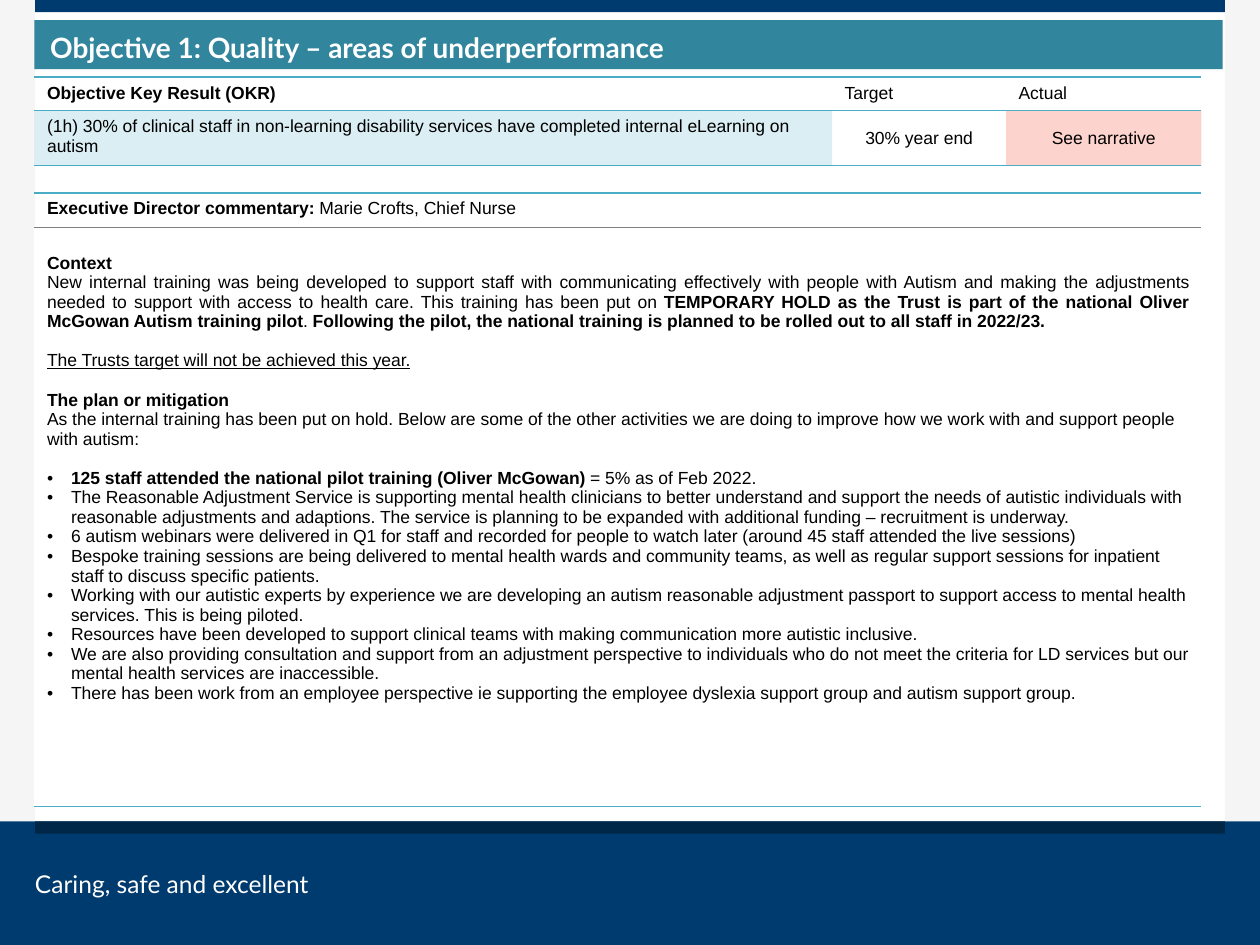
from lxml.etree import SubElement
from pptx import Presentation
from pptx.dml.color import RGBColor
from pptx.enum.shapes import MSO_SHAPE as Shape
from pptx.enum.text import MSO_ANCHOR as Anchor, PP_ALIGN as Align
from pptx.oxml.ns import qn
from pptx.util import Pt

COLORS = {
    "navy": "003B6F", "dark_navy": "002648", "pale_grey": "F5F5F5",
    "teal": "31859C", "aqua": "4BACC6", "red": "F82A08",
    "rule_grey": "7F7F7F", "white": "FFFFFF", "black": "000000",
}
PLAIN_TABLE = "{2D5ABB26-0587-4C30-8999-92F81FD0307C}"
BODY_SIZE = 10
LINE_GAP = 11.2
BULLET_INDENT = 13.68

CONTEXT = [
    ("New internal training was being developed to support staff with communicating effectively "
     "with people with Autism and making the adjustments needed to support with access to health "
     "care. This training has been put on ", ""),
    ("TEMPORARY HOLD as the Trust is part of the national Oliver McGowan Autism training pilot", "b"),
    (". ", ""),
    ("Following the pilot, the national training is planned to be rolled out to all staff in 2022/23.", "b"),
]
PLAN = ("As the internal training has been put on hold. Below are some of the other activities we are "
        "doing to improve how we work with and support people with autism:")
ACTIVITIES = [
    [("125 staff attended the national pilot training (Oliver McGowan) ", "b"),
     ("= 5% as of Feb 2022.", "")],
    [("The Reasonable Adjustment Service is supporting mental health clinicians to better understand "
      "and support the needs of autistic individuals with reasonable adjustments and adaptions. The "
      "service is planning to be expanded with additional funding – recruitment is underway.", "")],
    [("6 autism webinars were delivered in Q1 for staff and recorded for people to watch later "
      "(around 45 staff attended the live sessions)", "")],
    [("Bespoke training sessions are being delivered to mental health wards and community teams, as "
      "well as regular support sessions for inpatient staff to discuss specific patients.", "")],
    [("Working with our autistic experts by experience we are developing an autism reasonable "
      "adjustment passport to support access to mental health services. This is being piloted.", "")],
    [("Resources have been developed to support clinical teams with making communication more "
      "autistic inclusive.", "")],
    [("We are also providing consultation and support from an adjustment perspective to individuals "
      "who do not meet the criteria for LD services but our mental health services are "
      "inaccessible.", "")],
    [("There has been work from an employee perspective ie supporting the employee dyslexia support "
      "group and autism support group.", "")],
]


def rgb(color):
    return RGBColor.from_string(COLORS[color])


def add_run(paragraph, text, size, font, color, style=""):
    """Style holds the letters b (bold) and u (underlined)."""
    run = paragraph.add_run()
    run.text = text
    run.font.size, run.font.name = Pt(size), font
    run.font.color.rgb = rgb(color)
    run.font.bold, run.font.underline = "b" in style, "u" in style


def write(frame, runs, align=Align.LEFT, gap=0, bullet=False):
    """Adds a body paragraph, reusing the first one while it is empty."""
    first = frame.paragraphs[0]
    paragraph = frame.add_paragraph() if first.runs else first
    paragraph.alignment = align
    paragraph.space_before = Pt(gap)
    if bullet:
        properties = paragraph._p.get_or_add_pPr()
        properties.set("marL", str(Pt(BULLET_INDENT)))
        properties.set("indent", str(-Pt(BULLET_INDENT)))
        SubElement(properties, qn("a:buFont"), typeface="Arial")
        SubElement(properties, qn("a:buChar"), char="•")
    for text, style in runs:
        add_run(paragraph, text, BODY_SIZE, "Arial", "black", style)


def add_bar(slide, left, top, width, height, color):
    bar = slide.shapes.add_shape(Shape.RECTANGLE, Pt(left), Pt(top), Pt(width), Pt(height))
    bar.shadow.inherit = False
    bar.fill.solid()
    bar.fill.fore_color.rgb = rgb(color)
    bar.line.fill.background()
    return bar


def add_rule(cell, side, color="aqua", width=1):
    rule = SubElement(cell._tc.get_or_add_tcPr(), qn(f"a:ln{side}"), w=str(Pt(width)))
    fill = SubElement(rule, qn("a:solidFill"))
    SubElement(fill, qn("a:srgbClr"), val=COLORS[color])


def tint(cell, color, percent):
    cell.fill.solid()
    cell.fill.fore_color.rgb = rgb(color)
    swatch = cell._tc.tcPr.find(f".//{qn('a:solidFill')}[last()]/{qn('a:srgbClr')}")
    for swatch in cell._tc.tcPr.findall(f"{qn('a:solidFill')}/{qn('a:srgbClr')}"):
        SubElement(swatch, qn("a:alpha"), val=str(percent * 1000))


def add_ruled_table(slide, left, top, widths, heights, header_rule):
    """Adds an unfilled two-row table; header_rule is the (colour, width) under its first row."""
    table = slide.shapes.add_table(len(heights), len(widths), Pt(left), Pt(top),
                                   Pt(sum(widths)), Pt(sum(heights))).table
    table._tbl.tblPr.find(qn("a:tableStyleId")).text = PLAIN_TABLE
    table.first_row = table.horz_banding = False
    for column, width in zip(table.columns, widths):
        column.width = Pt(width)
    for row, height in zip(table.rows, heights):
        row.height = Pt(height)
    for header, body in zip(table.rows[0].cells, table.rows[1].cells):
        add_rule(header, "T")
        add_rule(header, "B", *header_rule)
        add_rule(body, "T", *header_rule)
        add_rule(body, "B")
        header.fill.background()
    return table


def add_frame(slide, width, height, margin, footer_top):
    inner = width - 2 * margin
    for left in (0, width - margin):
        add_bar(slide, left, 0, margin, footer_top, "pale_grey")
    add_bar(slide, 0, footer_top, width, height - footer_top, "navy")
    add_bar(slide, margin, footer_top, inner, 7, "dark_navy")
    add_bar(slide, margin, 0, inner, 7, "navy")
    motto = slide.shapes.add_textbox(Pt(margin), Pt(footer_top + 27.4), Pt(221), Pt(17)).text_frame
    motto.word_wrap = True
    motto.margin_left = motto.margin_right = motto.margin_top = motto.margin_bottom = 0
    add_run(motto.paragraphs[0], "Caring, safe and excellent", 14, "Lato", "white")


def add_title(slide, left, top, width, height):
    title = add_bar(slide, left, top, width, height, "teal").text_frame
    title.word_wrap = True
    title.vertical_anchor = Anchor.MIDDLE
    title.margin_left, title.margin_right = Pt(9), Pt(5)
    title.margin_top = title.margin_bottom = Pt(3)
    paragraph = title.paragraphs[0]
    paragraph.alignment = Align.LEFT
    paragraph.line_spacing = 1.15
    add_run(paragraph, "Objective 1: Quality – areas of underperformance", 16, "Lato", "white", "b")


def add_key_result(slide, left, top, widths):
    table = add_ruled_table(slide, left, top, widths, (19, 31.4), ("aqua", 0.5))
    columns = [
        ("Objective Key Result (OKR)", "b", "aqua",
         "(1h) 30% of clinical staff in non-learning disability services have completed internal "
         "eLearning on autism"),
        ("Target", "", "white", "30% year end"),
        ("Actual", "", "red", "See narrative"),
    ]
    for index, (heading, style, color, value) in enumerate(columns):
        header, result = table.cell(0, index), table.cell(1, index)
        write(header.text_frame, [(heading, style)])
        write(result.text_frame, [(value, "")], Align.CENTER if index else Align.LEFT)
        if index:
            result.vertical_anchor = Anchor.MIDDLE
        tint(result, color, 20)


def add_commentary(slide, left, top, width):
    table = add_ruled_table(slide, left, top, (width,), (19.8, 331), ("rule_grey", 0.5))
    write(table.cell(0, 0).text_frame,
          [("Executive Director commentary: ", "b"), ("Marie Crofts, Chief Nurse", "")])
    narrative = table.cell(1, 0)
    narrative.fill.solid()
    narrative.fill.fore_color.rgb = rgb("white")
    narrative.margin_top = Pt(3.6 + LINE_GAP)
    frame = narrative.text_frame
    write(frame, [("Context", "b")])
    write(frame, CONTEXT, Align.JUSTIFY)
    write(frame, [("The Trusts target will not be achieved this year.", "u")], gap=LINE_GAP)
    write(frame, [("The plan or mitigation", "b")], gap=LINE_GAP)
    write(frame, [(PLAN, "")])
    for index, activity in enumerate(ACTIVITIES):
        write(frame, activity, gap=0 if index else LINE_GAP, bullet=True)


def main():
    deck = Presentation()
    deck.slide_width, deck.slide_height = Pt(720), Pt(540)
    slide = deck.slides.add_slide(deck.slide_layouts[6])
    left = 19.7
    widths = (455.8, 99.4, 111.6)
    add_frame(slide, 720, 540, 20, 469.4)
    add_title(slide, left, 11.5, 679, 28)
    add_key_result(slide, left, 44, widths)
    add_commentary(slide, left, 110.2, sum(widths))
    deck.save("out.pptx")


if __name__ == "__main__":
    main()
